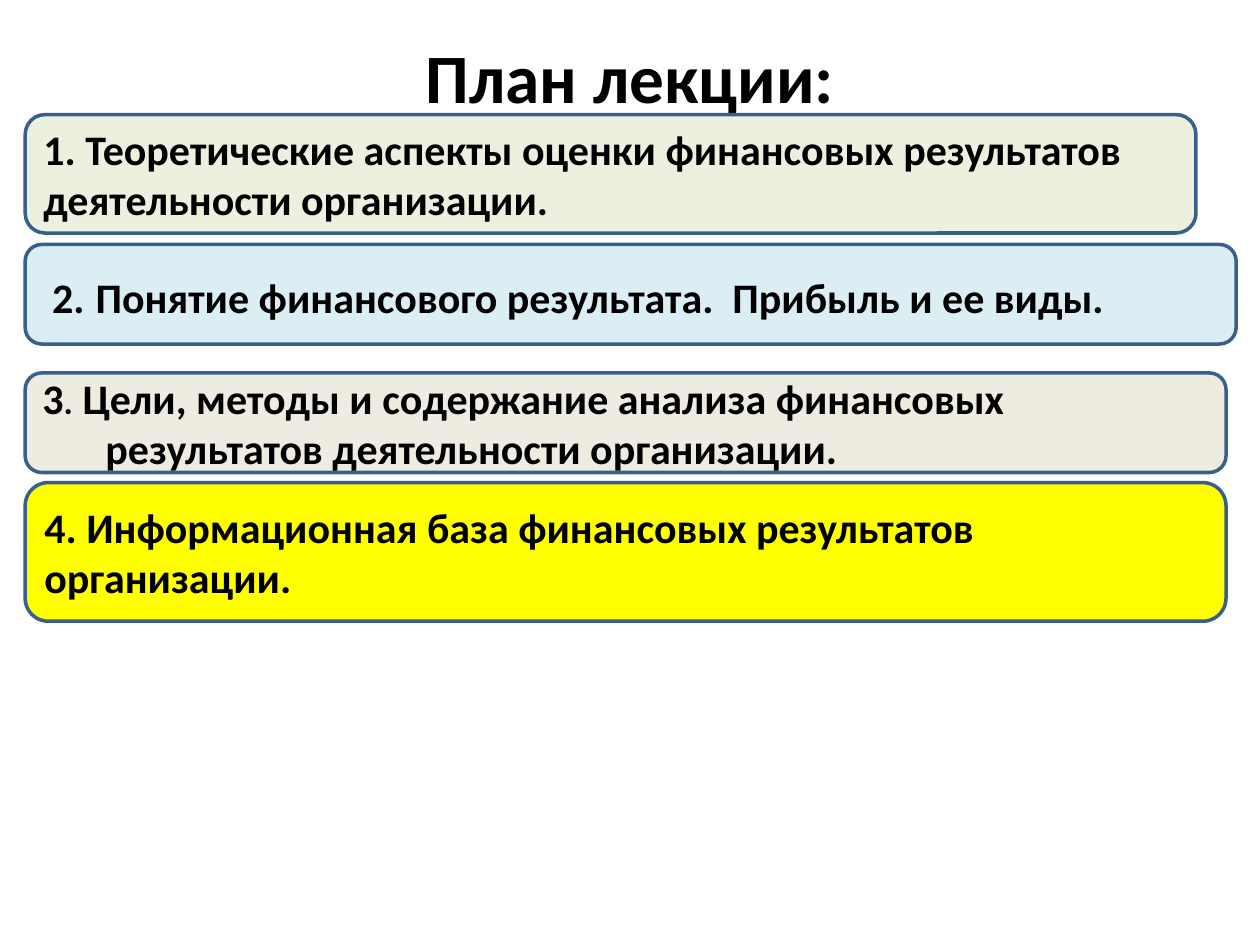
from dataclasses import dataclass

from pptx import Presentation
from pptx.dml.color import RGBColor
from pptx.enum.shapes import MSO_SHAPE
from pptx.enum.text import MSO_ANCHOR, PP_ALIGN
from pptx.util import Pt

ROUNDED = MSO_SHAPE.ROUNDED_RECTANGLE
MIDDLE = MSO_ANCHOR.MIDDLE
LEFT, CENTER = PP_ALIGN.LEFT, PP_ALIGN.CENTER

COLORS = {
    "text": "000000",
    "line": "3A5F8C",
    "green": "EBF1DE",
    "blue": "DBEEF4",
    "beige": "EEECE1",
    "yellow": "FFFF00",
}
BOX_LEFT = 14.4
INSET = 7.2
TITLE_SIZE = 39.6
ITEM_SIZE = 24


@dataclass
class Run:
    text: str
    size: float = ITEM_SIZE


@dataclass
class PlanItem:
    top: float
    width: float
    height: float
    fill: str
    runs: list[Run]
    inset: float = INSET
    hanging: float = 0


ITEMS = [
    PlanItem(65.5, 669, 67.7, "green", [
        Run("1. Теоретические аспекты оценки финансовых результатов деятельности организации.")]),
    PlanItem(139.7, 692, 56.9, "blue", [
        Run("2."), Run(" ", 28),
        Run("Понятие финансового результата.  Прибыль и ее виды.")], inset=12.6),
    PlanItem(213.1, 686.2, 56.9, "beige", [
        Run("3"), Run(".", 20),
        Run(" Цели, методы и содержание анализа финансовых результатов деятельности организации.")],
        hanging=36),
    PlanItem(275.8, 686.2, 79.2, "yellow", [
        Run("4. Информационная база финансовых результатов организации.")]),
]


def rgb(name: str) -> RGBColor:
    """Return the named colour."""
    return RGBColor.from_string(COLORS[name])


def write(sp, runs: list[Run], align, inset: float = INSET, hanging: float = 0) -> None:
    """Fill a shape with one bold paragraph."""
    tf = sp.text_frame
    frame_format = {"word_wrap": True, "vertical_anchor": MIDDLE, "margin_left": Pt(inset)}
    for name, value in frame_format.items():
        setattr(tf, name, value)
    p = tf.paragraphs[0]
    p.alignment = align
    if hanging:
        pPr = p._p.get_or_add_pPr()
        pPr.set("marL", str(Pt(hanging)))
        pPr.set("indent", str(-Pt(hanging)))
    for run in runs:
        r = p.add_run()
        r.text = run.text
        for name, value in {"name": "Calibri", "size": Pt(run.size), "bold": True}.items():
            setattr(r.font, name, value)
        r.font.color.rgb = rgb("text")


def add_item(s, item: PlanItem) -> None:
    """Draw one plan item in a rounded box."""
    sp = s.shapes.add_shape(ROUNDED, Pt(BOX_LEFT), Pt(item.top), Pt(item.width), Pt(item.height))
    sp.shadow.inherit = False
    sp.fill.solid()
    sp.fill.fore_color.rgb = rgb(item.fill)
    sp.line.color.rgb = rgb("line")
    sp.line.width = Pt(2)
    write(sp, item.runs, LEFT, item.inset, item.hanging)


def main() -> None:
    """Build the lecture plan slide."""
    prs = Presentation()
    prs.slide_width, prs.slide_height = Pt(720), Pt(540)
    s = prs.slides.add_slide(prs.slide_layouts[6])
    title = s.shapes.add_textbox(Pt(36), Pt(21.6), Pt(648), Pt(43.9))
    write(title, [Run("План лекции:", TITLE_SIZE)], CENTER)
    for item in ITEMS:
        add_item(s, item)
    prs.save("out.pptx")


if __name__ == "__main__":
    main()
